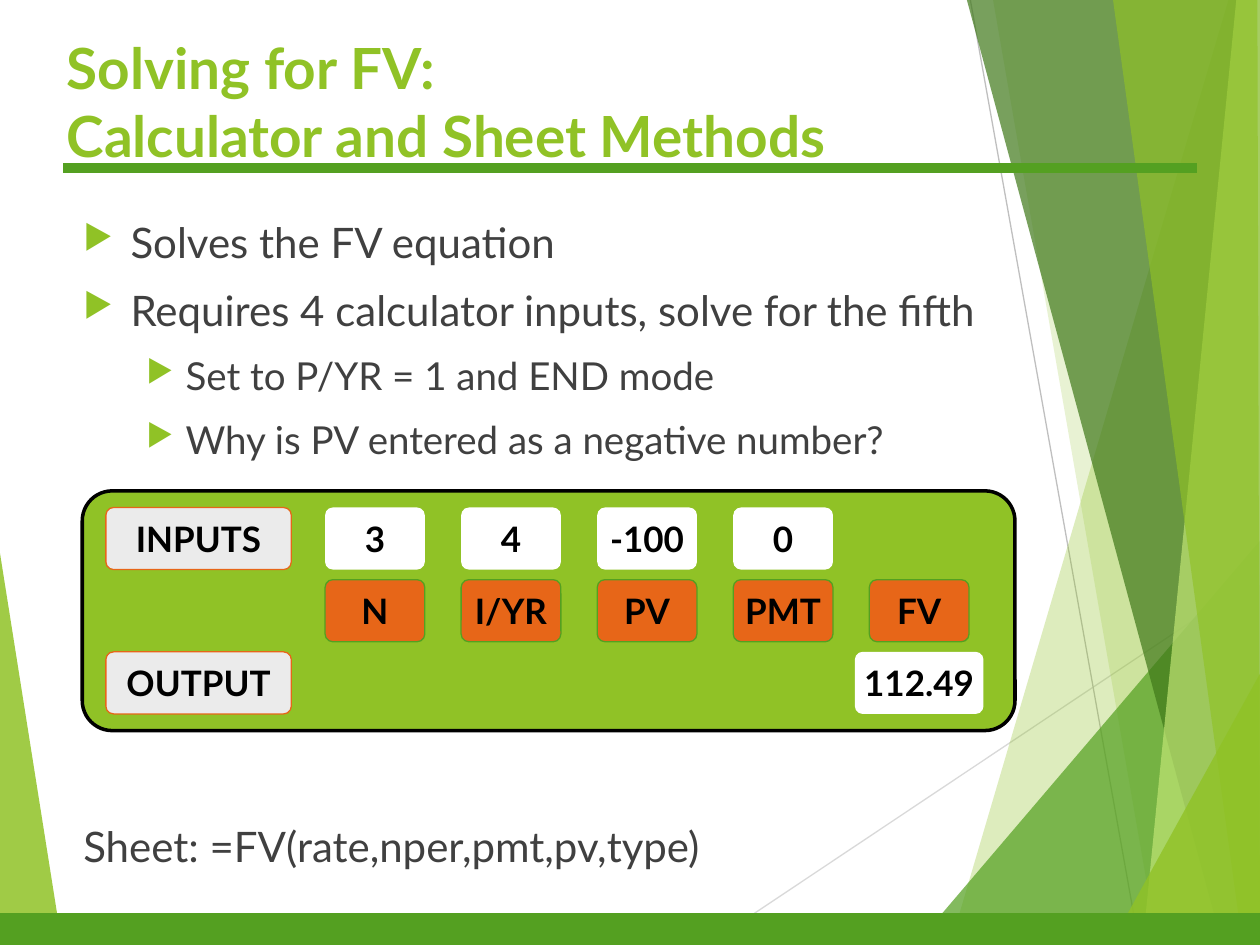
from lxml import etree
from pptx import Presentation
from pptx.dml.color import RGBColor
from pptx.enum import shapes, text
from pptx.oxml import ns
from pptx.util import Pt

FONT = "Lato"
LIME = RGBColor(0x90, 0xC2, 0x26)
PALE_LIME = RGBColor(0xC0, 0xE4, 0x74)
GREEN = RGBColor(0x54, 0xA0, 0x21)
DARK_GREEN = RGBColor(0x3F, 0x78, 0x19)
ORANGE = RGBColor(0xE7, 0x66, 0x18)
BLACK = RGBColor(0, 0, 0)
WHITE = RGBColor(0xFF, 0xFF, 0xFF)
LABEL_GRAY = RGBColor(0xEB, 0xEB, 0xEB)
TEXT_GRAY = RGBColor(0x40, 0x40, 0x40)
LIGHT_GRAY = RGBColor(0xD9, 0xD9, 0xD9)
MID_GRAY = RGBColor(0xBF, 0xBF, 0xBF)

LEFT_FACET = (LIME, 85, [(0, 316), (35.5, 540), (0, 540)])
RIGHT_FACETS = [
    (LIME, 30, [(702, 0), (543, 540), (720, 540), (720, 0)]),
    (LIME, 20, [(567.5, 0), (661.5, 540), (720, 540), (720, 0)]),
    (GREEN, 72, [(523, 540), (720, 309), (720, 540)]),
    (DARK_GREEN, 70, [(552.5, 0), (698.5, 540), (720, 540), (720, 0)]),
    (PALE_LIME, 70, [(706.5, 0), (653, 540), (720, 540), (720, 0)]),
    (LIME, 65, [(636, 0), (710, 540), (720, 540), (718.5, 0)]),
    (LIME, 80, [(634.5, 540), (720, 385), (720, 540)]),
]

BULLETS = [
    ("Solves the FV equation", 0),
    ("Requires 4 calculator inputs, solve for the fifth", 0),
    ("Set to P/YR = 1 and END mode", 1),
    ("Why is PV entered as a negative number?", 1),
]
LEVELS = [(24, 27, 27), (22, 58.5, 22.5)]  # text size, indent, hanging part

KEYS = ["N", "I/YR", "PV", "PMT", "FV"]
INPUTS = ["3", "4", "-100", "0"]
LABEL_LEFT, LABEL_WIDTH = 60.5, 106
KEY_LEFT, KEY_WIDTH, KEY_PITCH = 185.75, 57, 77.75
RESULT_WIDTH = 73.5
ROW_TOP, ROW_HEIGHT, ROW_PITCH = 290, 35.5, 41.25


def sub(parent, tag, **attributes):
    return etree.SubElement(parent, ns.qn(tag), attributes)


def paint(shape, fill, line=None, weight=0.75):
    shape.shadow.inherit = False
    shape.fill.solid()
    shape.fill.fore_color.rgb = fill
    if line is None:
        shape.line.fill.background()
    else:
        shape.line.color.rgb = line
        shape.line.width = Pt(weight)


def add_facet(page, color, opacity, points):
    """Draw a translucent polygon of the background."""
    corners = [(Pt(x), Pt(y)) for x, y in points]
    builder = page.shapes.build_freeform(*corners[0])
    builder.add_line_segments(corners[1:])
    facet = builder.convert_to_shape()
    paint(facet, color)
    rgb = facet.fill._xPr.find(".//" + ns.qn("a:srgbClr"))
    sub(rgb, "a:alpha", val=str(opacity * 1000))


def add_line(page, start, end, color, weight):
    line = page.shapes.add_connector(
        shapes.MSO_CONNECTOR.STRAIGHT, *map(Pt, start + end))
    line.line.color.rgb = color
    line.line.width = Pt(weight)
    sub(line._element.spPr, "a:effectLst")


def add_span(para, words, size, color, bold=False):
    span = para.add_run()
    span.text = words
    span.font.name = FONT
    span.font.size = Pt(size)
    span.font.bold = bold
    span.font.color.rgb = color


def add_text_frame(page, left, top, width, height):
    frame = page.shapes.add_textbox(*map(Pt, (left, top, width, height))).text_frame
    frame.word_wrap = True
    return frame


def add_bullet(para, words, level):
    size, indent, hanging = LEVELS[level]
    para.level = level
    para.space_before = Pt(10)
    props = para._p.get_or_add_pPr()
    props.set("marL", str(Pt(indent)))
    props.set("indent", str(-Pt(hanging)))
    sub(sub(props, "a:buClr"), "a:srgbClr", val=str(LIME))
    sub(props, "a:buSzPct", val="80000")
    sub(props, "a:buChar", char="▶")
    add_span(para, words, size, TEXT_GRAY)


def add_panel(page, left, top, width, height, fill, line=None, weight=0.75):
    panel = page.shapes.add_shape(
        shapes.MSO_SHAPE.ROUNDED_RECTANGLE, *map(Pt, (left, top, width, height)))
    panel.adjustments[0] = 0.125
    paint(panel, fill, line, weight)
    return panel


def add_key(page, words, left, row, width, fill, line=None):
    key = add_panel(page, left, ROW_TOP + row * ROW_PITCH, width, ROW_HEIGHT, fill, line)
    frame = key.text_frame
    frame.word_wrap = False
    frame.vertical_anchor = text.MSO_ANCHOR.MIDDLE
    para = frame.paragraphs[0]
    para.alignment = text.PP_ALIGN.CENTER
    add_span(para, words, 20, BLACK, bold=True)


def add_background(page):
    add_facet(page, *LEFT_FACET)
    add_line(page, (404, 540), (720, 329), LIGHT_GRAY, 0.75)
    add_line(page, (554.5, 0), (651, 540), MID_GRAY, 0.75)
    for facet in RIGHT_FACETS:
        add_facet(page, *facet)
    add_line(page, (36, 96), (684, 96), GREEN, 6)
    footer = page.shapes.add_shape(
        shapes.MSO_SHAPE.RECTANGLE, 0, Pt(522), Pt(720), Pt(18))
    paint(footer, GREEN, GREEN)


def add_title(page):
    para = add_text_frame(page, 31, 15, 549, 91.5).paragraphs[0]
    add_span(para, "Solving for FV:", 32.4, LIME, bold=True)
    para.add_line_break()
    add_span(para, "Calculator and Sheet Methods", 32.4, LIME, bold=True)


def add_body(page):
    frame = add_text_frame(page, 40.5, 120, 571.5, 150)
    for number, (words, level) in enumerate(BULLETS):
        para = frame.add_paragraph() if number else frame.paragraphs[0]
        add_bullet(para, words, level)
    formula = add_text_frame(page, 40.5, 465.5, 571.5, 36)
    add_span(formula.paragraphs[0], "Sheet: =FV(rate,nper,pmt,pv,type)", 24, TEXT_GRAY)


def add_calculator(page):
    add_panel(page, 47, 280.5, 533, 137, LIME, BLACK, 2)
    for row, label in ((0, "INPUTS"), (2, "OUTPUT")):
        add_key(page, label, LABEL_LEFT, row, LABEL_WIDTH, LABEL_GRAY, ORANGE)
    lefts = [KEY_LEFT + column * KEY_PITCH for column in range(len(KEYS))]
    for left, key in zip(lefts, KEYS):
        add_key(page, key, left, 1, KEY_WIDTH, ORANGE, GREEN)
    for left, value in zip(lefts, INPUTS):
        add_key(page, value, left, 0, KEY_WIDTH, WHITE)
    result_left = lefts[-1] - (RESULT_WIDTH - KEY_WIDTH) / 2
    add_key(page, "112.49", result_left, 2, RESULT_WIDTH, WHITE)


def main():
    deck = Presentation()
    deck.slide_width, deck.slide_height = Pt(720), Pt(540)
    page = deck.slides.add_slide(deck.slide_layouts[6])
    add_background(page)
    add_title(page)
    add_body(page)
    add_calculator(page)
    deck.save("out.pptx")


if __name__ == "__main__":
    main()
